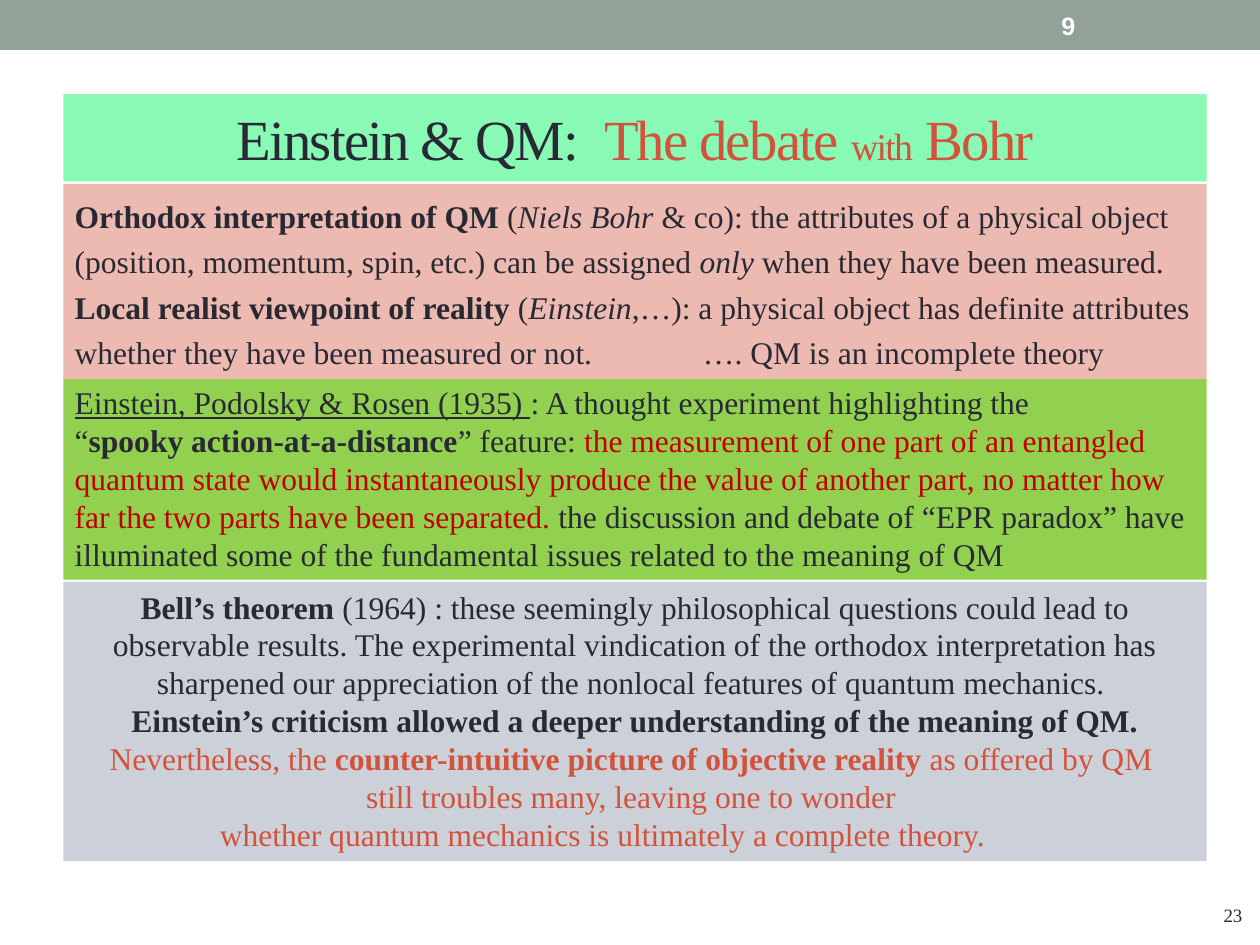
"""Build the slide on Einstein, Bohr and the debate about quantum mechanics."""
import dataclasses
import typing

import lxml.etree
import pptx
import pptx.dml.color
import pptx.enum.shapes
import pptx.enum.text
import pptx.oxml.ns
import pptx.util

Inches = pptx.util.Inches
RGBColor = pptx.dml.color.RGBColor
ALIGN = pptx.enum.text.PP_ALIGN
ANCHOR = pptx.enum.text.MSO_ANCHOR

INK = RGBColor(0x29, 0x29, 0x34)
RUST = RGBColor(0xD2, 0x53, 0x3C)
RED = RGBColor(0xC0, 0x00, 0x00)
WHITE = RGBColor(0xFF, 0xFF, 0xFF)
SAGE = RGBColor(0x93, 0xA2, 0x99)
MINT = RGBColor(0x89, 0xF9, 0xB6)
PINK = RGBColor(0xED, 0xBA, 0xB1)
GREEN = RGBColor(0x92, 0xD0, 0x50)
GREY = RGBColor(0xCC, 0xD1, 0xD9)

BOLD = {"bold": True}
ITALIC = {"italic": True}
UNDERLINE = {"underline": True}
LEFT, WIDTH = 0.56, 10.08


@dataclasses.dataclass
class Run:
    text: str
    fmt: dict = dataclasses.field(default_factory=dict)
    color: RGBColor = INK
    size: float = 20
    font: str = "Times New Roman"
    spacing: float = 0
    new_line: bool = False


@dataclasses.dataclass
class Para:
    runs: list[Run]
    align: ALIGN = ALIGN.LEFT
    line_spacing: typing.Optional[float] = None
    indent: float = 0
    tab: float = 0


@dataclasses.dataclass
class Band:
    top: float
    height: float
    fill: RGBColor
    paras: list[Para]


@dataclasses.dataclass
class Number:
    box: tuple[float, float, float, float]
    run: Run
    anchor: ANCHOR
    inset: float


TITLE = Para([
    Run("Einstein & QM:", size=36, spacing=-1.1),
    Run(" ", size=36, spacing=6.8),
    Run("The debate ", color=RUST, size=36, spacing=-1.1),
    Run("with", color=RUST, size=24, spacing=-1.1),
    Run(" Bohr", color=RUST, size=36, spacing=-1.1),
], ALIGN.CENTER)

BANDS = [
    Band(5.13, 2.46, GREY, [
        Para([Run("Bell’s theorem ", BOLD),
              Run("(1964) : these seemingly philosophical questions could lead to "
                  "observable results. The experimental vindication of the orthodox "
                  "interpretation has sharpened our appreciation of the nonlocal "
                  "features of quantum mechanics. ")], ALIGN.CENTER),
        Para([Run("Einstein’s criticism allowed a deeper understanding of the "
                  "meaning of QM.", BOLD)], ALIGN.CENTER),
        Para([Run("Nevertheless, the ", color=RUST),
              Run("counter-intuitive picture of objective reality ", BOLD, RUST),
              Run("as offered by QM ", color=RUST)], ALIGN.CENTER),
        Para([Run("still troubles many, leaving one to wonder ", color=RUST)], ALIGN.CENTER),
        Para([Run("whether quantum mechanics is ultimately a complete theory.",
                  color=RUST)], indent=1.28),
    ]),
    Band(3.33, 1.78, GREEN, [
        Para([Run("Einstein, Podolsky & Rosen (1935) ", UNDERLINE),
              Run(": A thought experiment highlighting the"),
              Run("“", new_line=True),
              Run("spooky action-at-a-distance", BOLD),
              Run("” feature: "),
              Run("the measurement of one part of an entangled quantum state would "
                  "instantaneously produce the value of another part, no matter how "
                  "far the two parts have been separated.", color=RED),
              Run(" the discussion and debate of “EPR paradox” have illuminated some "
                  "of the fundamental issues related to the meaning of QM")]),
    ]),
    Band(1.62, 1.72, PINK, [
        Para([Run("Orthodox interpretation of QM ", BOLD),
              Run("("),
              Run("Niels Bohr ", ITALIC),
              Run("& co): the attributes of a physical object (position, momentum, "
                  "spin, etc.) can be assigned "),
              Run("only", ITALIC),
              Run(" when they have been measured.")], line_spacing=1.2),
        Para([Run("Local realist viewpoint of reality ", BOLD),
              Run("("),
              Run("Einstein", ITALIC),
              Run(",…): a physical object has definite attributes whether they have "
                  "been measured or not.\t…. QM is an incomplete theory")],
             line_spacing=1.2, tab=5.54),
    ]),
]

NUMBERS = [
    Number((10.69, 7.92, 0.61, 0.3), Run("23", size=12), ANCHOR.TOP, 0.05),
    Number((9.26, 0.02, 1.3, 0.4), Run("9", BOLD, WHITE, 16, "Arial"), ANCHOR.MIDDLE, 0.06),
]


def write(sp, paras: list[Para], anchor: ANCHOR, inset: float = 0.05) -> None:
    tf = sp.text_frame
    frame = {"word_wrap": True, "auto_size": pptx.enum.text.MSO_AUTO_SIZE.NONE,
             "vertical_anchor": anchor, "margin_left": Inches(0.1),
             "margin_right": Inches(0.1), "margin_top": Inches(inset),
             "margin_bottom": Inches(inset)}
    for name, value in frame.items():
        setattr(tf, name, value)
    for i, para in enumerate(paras):
        p = tf.add_paragraph() if i else tf.paragraphs[0]
        p.alignment = para.align
        p.line_spacing = para.line_spacing
        pPr = p._p.get_or_add_pPr()
        if para.indent:
            pPr.set("marL", str(Inches(para.indent)))
        if para.tab:
            tabs = lxml.etree.SubElement(pPr, pptx.oxml.ns.qn("a:tabLst"))
            lxml.etree.SubElement(tabs, pptx.oxml.ns.qn("a:tab"),
                                  pos=str(Inches(para.tab)), algn="l")
        for run in para.runs:
            if run.new_line:
                p.add_line_break()
            r = p.add_run()
            r.text = run.text
            fmt = {"name": run.font, "size": pptx.util.Pt(run.size), **run.fmt}
            for name, value in fmt.items():
                setattr(r.font, name, value)
            r.font.color.rgb = run.color
            if run.spacing:
                r._r.get_or_add_rPr().set("spc", str(round(run.spacing * 100)))


def paint(sp, color: RGBColor) -> None:
    sp.fill.solid()
    sp.fill.fore_color.rgb = color


def add_rect(s, left: float, top: float, width: float, height: float, color: RGBColor):
    sp = s.shapes.add_shape(pptx.enum.shapes.MSO_SHAPE.RECTANGLE,
                            *map(Inches, (left, top, width, height)))
    paint(sp, color)
    sp.line.fill.background()
    sp.shadow.inherit = False
    return sp


def main() -> None:
    prs = pptx.Presentation()
    prs.slide_width, prs.slide_height = Inches(11.11), Inches(8.33)
    s = prs.slides.add_slide(prs.slide_layouts[5])
    add_rect(s, 0, 0, 11.11, 0.44, SAGE)

    title = s.shapes.title
    place = {"left": LEFT, "top": 0.83, "width": WIDTH, "height": 0.77}
    for name, value in place.items():
        setattr(title, name, Inches(value))
    paint(title, MINT)
    write(title, [TITLE], ANCHOR.MIDDLE, 0.06)

    for band in BANDS:
        sp = add_rect(s, LEFT, band.top, WIDTH, band.height, band.fill)
        write(sp, band.paras, ANCHOR.TOP)
    for number in NUMBERS:
        sp = s.shapes.add_textbox(*map(Inches, number.box))
        write(sp, [Para([number.run])], number.anchor, number.inset)
    prs.save("out.pptx")


if __name__ == "__main__":
    main()
